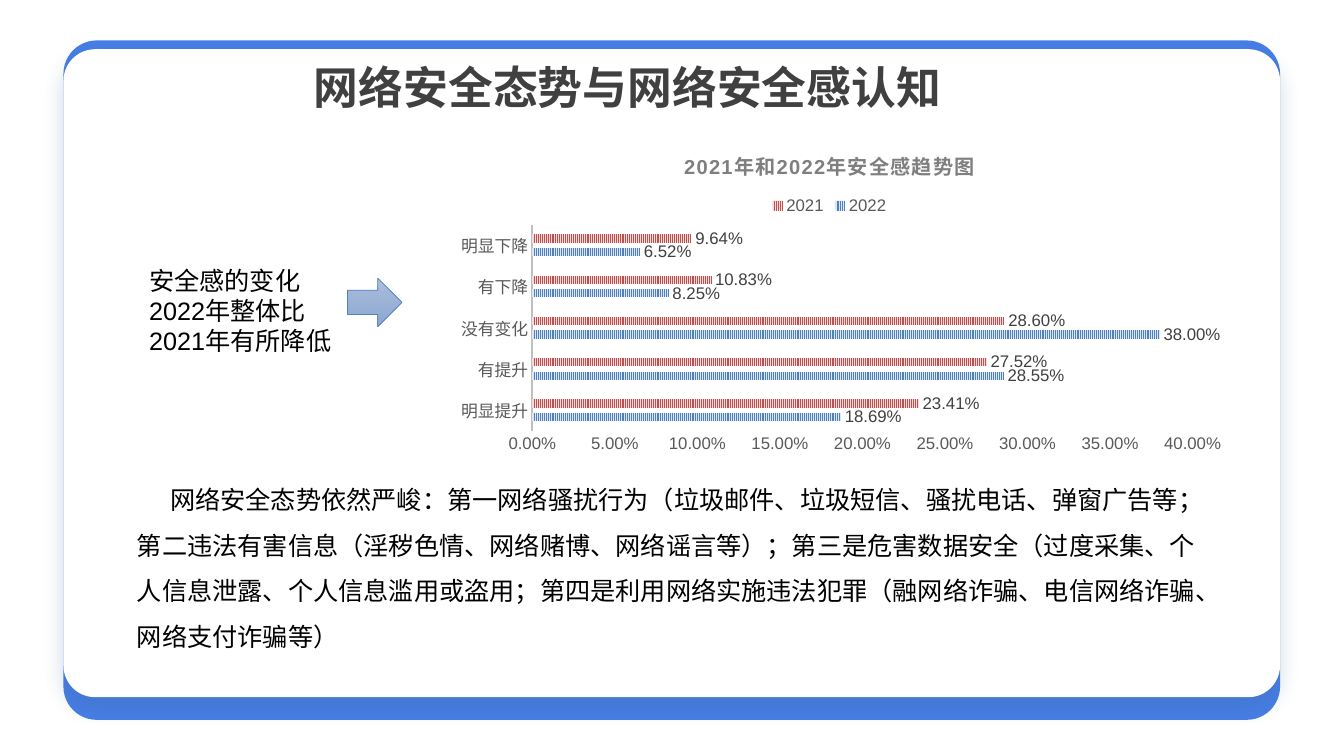
"""Build the slide on the network security situation and the sense of security."""
from dataclasses import dataclass

from lxml import etree
from pptx import Presentation
from pptx import util as u
from pptx.chart import data
from pptx.dml import color
from pptx.enum import chart as charts
from pptx.enum import dml, shapes, text
from pptx.oxml import parse_xml
from pptx.oxml import ns


@dataclass(frozen=True)
class Theme:
    frame: str = "477EE5"
    paper: str = "FFFFFF"
    shadow: str = "376092"
    heading: str = "404040"
    ink: str = "000000"
    muted: str = "595959"
    chart_title: str = "7F7F7F"
    axis: str = "BFBFBF"
    arrow_top: str = "ABBEDB"
    arrow_bottom: str = "8CA7D2"
    arrow_line: str = "4F81BD"
    latin: str = "Arial"
    chinese: str = "Noto Sans CJK SC"
    heading_size: float = 32
    body_size: float = 18
    chart_title_size: float = 14.4
    chart_size: float = 12


theme = Theme()
rgb = color.RGBColor.from_string


def style(font, size, tint, name=theme.latin, bold=False):
    font.size, font.name, font.bold = u.Pt(size), name, bold
    font.color.rgb = rgb(tint)


def add_text(page, place, words, size, tint, name=theme.latin, bold=False):
    box = page.shapes.add_textbox(*map(u.Cm, place))
    box.text_frame.word_wrap = True
    box.text_frame.auto_size = text.MSO_AUTO_SIZE.SHAPE_TO_FIT_TEXT
    para = box.text_frame.paragraphs[0]
    para.text = words
    style(para.font, size, tint, name, bold)
    return para


deck = Presentation()
deck.slide_width, deck.slide_height = u.Cm(33.87), u.Cm(19.05)
page = deck.slides.add_slide(deck.slide_layouts[6])

for top, height, tint in ((1.02, 17.12, theme.frame), (1.24, 16.33, theme.paper)):
    card = page.shapes.add_shape(shapes.MSO_SHAPE.ROUNDED_RECTANGLE,
                                 u.Cm(1.6), u.Cm(top), u.Cm(30.66), u.Cm(height))
    card.adjustments[0] = 0.049
    card.shadow.inherit = False
    card.fill.solid()
    card.fill.fore_color.rgb = rgb(tint)
    card.line.fill.background()

effects = card.element.spPr.find(ns.qn("a:effectLst"))
shadow = etree.SubElement(effects, ns.qn("a:outerShdw"), blurRad=str(u.Pt(16)),
                          dist=str(u.Pt(8)), dir="5400000", algn="t", rotWithShape="0")
shade = etree.SubElement(shadow, ns.qn("a:srgbClr"), val=theme.shadow)
etree.SubElement(shade, ns.qn("a:alpha"), val="23000")

heading = add_text(page, (5.33, 1.37, 20.98, 1.63), "网络安全态势与网络安全感认知",
                   theme.heading_size, theme.heading, bold=True)
heading.alignment = text.PP_ALIGN.CENTER

summary = add_text(
    page, (3.2, 11.71, 27.38, 4.88),
    "网络安全态势依然严峻：第一网络骚扰行为（垃圾邮件、垃圾短信、骚扰电话、弹窗广告等；"
    "第二违法有害信息（淫秽色情、网络赌博、网络谣言等）；第三是危害数据安全（过度采集、"
    "个人信息泄露、个人信息滥用或盗用；第四是利用网络实施违法犯罪（融网络诈骗、"
    "电信网络诈骗、网络支付诈骗等）",
    theme.body_size, theme.ink, theme.chinese)
summary.line_spacing = 1.5
summary.font._element.getparent().set("indent", str(u.Cm(0.84)))

add_text(page, (3.51, 6.55, 5.54, 2.57), "安全感的变化2022年整体比2021年有所降低",
         theme.body_size, theme.ink)

trend = data.CategoryChartData(number_format="0.00%")
trend.categories = ["明显提升", "有提升", "没有变化", "有下降", "明显下降"]
trend.add_series("2022", (0.1869, 0.2855, 0.38, 0.0825, 0.0652))
trend.add_series("2021", (0.2341, 0.2752, 0.286, 0.1083, 0.0964))
chart = page.shapes.add_chart(charts.XL_CHART_TYPE.BAR_CLUSTERED, u.Cm(10.59), u.Cm(3.35),
                              u.Cm(20.62), u.Cm(8.38), trend).chart
style(chart.font, theme.chart_size, theme.ink)

chart.has_title = True
title = chart.chart_title.text_frame.paragraphs[0]
title.text = "2021年和2022年安全感趋势图"
style(title.font, theme.chart_title_size, theme.chart_title, bold=True)
title.font._element.set("spc", "100")
chart.chart_title.include_in_layout = False

chart.has_legend = True
chart.legend.position = charts.XL_LEGEND_POSITION.TOP
chart.legend.include_in_layout = False
style(chart.legend.font, theme.chart_size, theme.muted)

for axis in (chart.category_axis, chart.value_axis):
    axis.major_tick_mark = axis.minor_tick_mark = charts.XL_TICK_MARK.NONE
    axis.has_major_gridlines = False
    style(axis.tick_labels.font, theme.chart_size, theme.muted)
chart.category_axis.format.line.color.rgb = rgb(theme.axis)
chart.category_axis.format.line.width = u.Pt(1.5)
chart.value_axis.format.line.fill.background()
chart.value_axis.minimum_scale, chart.value_axis.maximum_scale = 0, 0.4
chart.value_axis.major_unit = 0.05
chart.value_axis.tick_labels.number_format = "0.00%"
chart.value_axis.tick_labels.number_format_is_linked = False

plot = chart.plots[0]
plot.gap_width, plot.overlap, plot.vary_by_categories = 238, -65, False
for series, (front, back) in zip(plot.series, (("4F81BD", "DCE6F2"), ("C0504D", "F2DCDB"))):
    fill = series.format.fill
    fill.patterned()
    fill.pattern = dml.MSO_PATTERN.NARROW_VERTICAL
    fill.fore_color.rgb, fill.back_color.rgb = rgb(front), rgb(back)
    labels = series.data_labels
    labels.show_value = True
    labels.position = charts.XL_LABEL_POSITION.OUTSIDE_END
    labels.number_format, labels.number_format_is_linked = "0.00%", False
    style(labels.font, theme.chart_size, theme.heading)

layout = parse_xml(
    f'<c:layout {ns.nsdecls("c")}><c:manualLayout><c:layoutTarget val="inner"/>'
    '<c:xMode val="edge"/><c:yMode val="edge"/><c:x val="0.137"/><c:y val="0.276"/>'
    '<c:w val="0.807"/><c:h val="0.62"/></c:manualLayout></c:layout>')
chart.element.find(".//" + ns.qn("c:plotArea")).insert(0, layout)

arrow = page.shapes.add_shape(shapes.MSO_SHAPE.RIGHT_ARROW,
                              u.Cm(8.76), u.Cm(7.01), u.Cm(1.37), u.Cm(1.22))
arrow.shadow.inherit = False
arrow.fill.gradient()
arrow.fill.gradient_angle = 270
for stop, tint in zip(arrow.fill.gradient_stops, (theme.arrow_top, theme.arrow_bottom)):
    stop.color.rgb = rgb(tint)
arrow.line.color.rgb = rgb(theme.arrow_line)
arrow.line.width = u.Pt(0.5)

deck.save("out.pptx")
